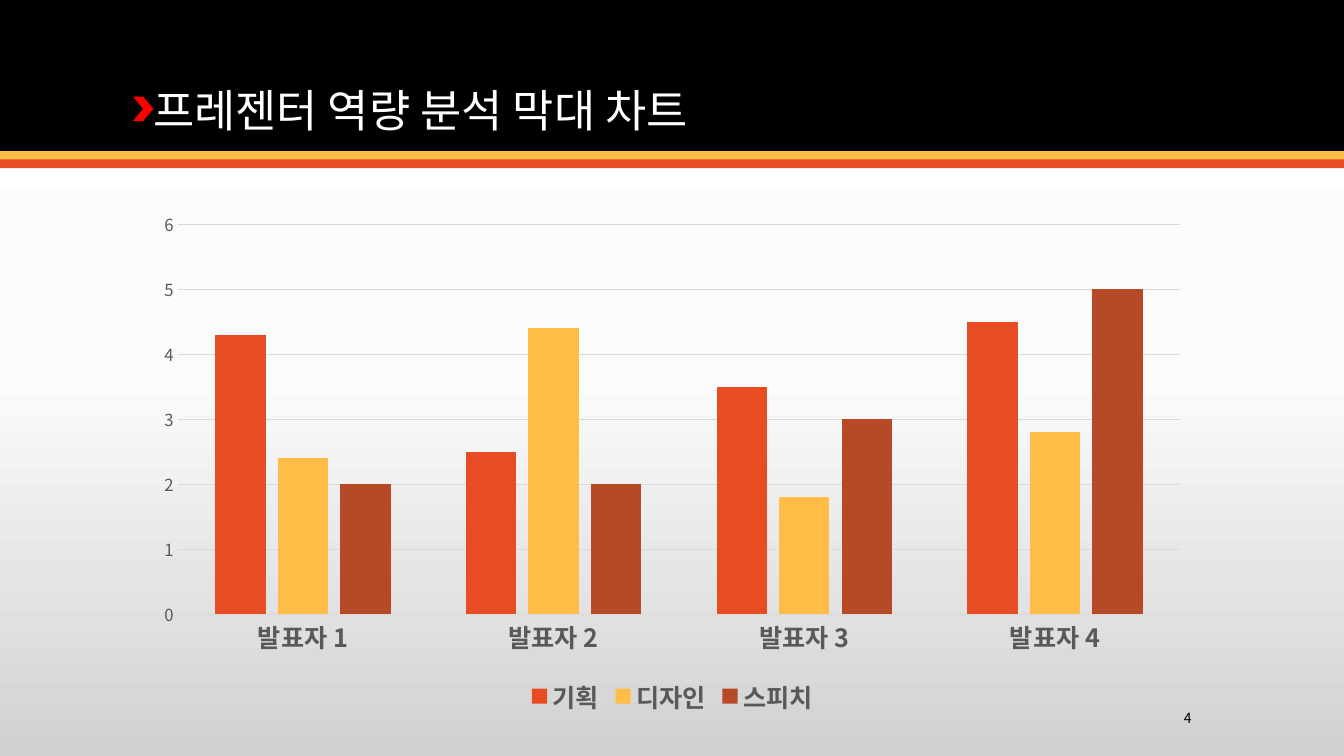
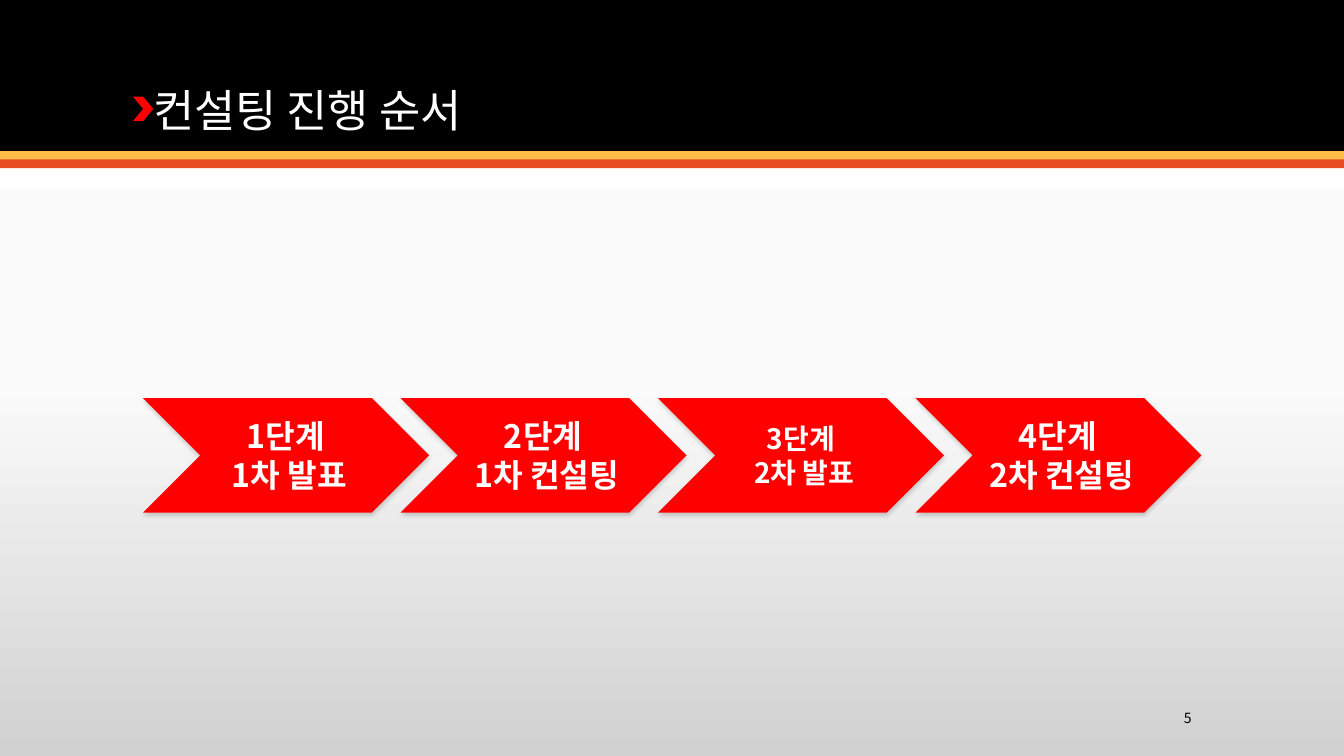
from copy import deepcopy

from lxml import etree
from pptx import Presentation
from pptx.chart.data import CategoryChartData
from pptx.dml.color import RGBColor
from pptx.enum import chart as kinds, shapes, text
from pptx.oxml.ns import qn
from pptx.util import Pt

FONT = "Noto Sans CJK KR"
BLACK, WHITE, RED = "000000", "FFFFFF", "FF0000"
ORANGE, YELLOW, BROWN = "E84C22", "FFBD47", "B64926"
GRAY, RULE = "595959", "D9D9D9"
WIDTH, HEIGHT = 960, 540
LEFT, BODY_WIDTH = 102.24, 756

BACKDROP = [(0, WHITE), (0.5, "FBFBFB"), (1, "D1D1D1")]
BANDS = [(0, 108, BLACK), (108, 6.2, YELLOW), (113.9, 6.2, ORANGE)]

CHART_TITLE = "프레젠터 역량 분석 막대 차트"
PRESENTERS = ["발표자 1", "발표자 2", "발표자 3", "발표자 4"]
SKILLS = [
    ("기획", (4.3, 2.5, 3.5, 4.5), ORANGE),
    ("디자인", (2.4, 4.4, 1.8, 2.8), YELLOW),
    ("스피치", (2, 2, 3, 5), BROWN),
]

STEPS_TITLE = "컨설팅 진행 순서"
STEPS = [
    ("1단계 ", "1차 발표", 23),
    ("2단계 ", "1차 컨설팅", 23),
    ("3단계 ", "2차 발표", 20),
    ("4단계 ", "2차 컨설팅", 23),
]


def rgb(color):
    return RGBColor.from_string(color)


def assign(target, values):
    for name, value in values.items():
        setattr(target, name, value)


def style(font, size, color, bold=False):
    assign(font, {"size": Pt(size), "bold": bold, "name": FONT})
    font.fill.solid()
    font.fill.fore_color.rgb = rgb(color)
    etree.SubElement(font._rPr, qn("a:ea")).set("typeface", FONT)


def write(shape, lines, size, color, bold=False, align=text.PP_ALIGN.LEFT,
          anchor=text.MSO_ANCHOR.MIDDLE, spacing=1.0):
    frame = shape.text_frame
    assign(frame, {"word_wrap": True, "vertical_anchor": anchor})
    frame.text = "\n".join(lines)
    for paragraph in frame.paragraphs:
        assign(paragraph, {"alignment": align, "line_spacing": spacing})
        style(paragraph.runs[0].font, size, color, bold)
    return frame


def add_filled(parent, kind, box, color):
    shape = parent.add_shape(kind, *map(Pt, box))
    shape.shadow.inherit = False
    shape.fill.solid()
    shape.fill.fore_color.rgb = rgb(color)
    shape.line.fill.background()
    return shape


def add_backdrop(slide):
    fill = slide.background.fill
    fill.gradient()
    fill.gradient_angle = 270
    stops = slide._element.find(".//" + qn("a:gsLst"))
    stops.append(deepcopy(stops[0]))
    for stop, (position, color) in zip(fill.gradient_stops, BACKDROP):
        stop.position = position
        stop.color.rgb = rgb(color)


def add_slide(deck, title, number):
    slide = deck.slides.add_slide(deck.slide_layouts[6])
    add_backdrop(slide)
    for top, height, color in BANDS:
        add_filled(slide.shapes, shapes.MSO_SHAPE.RECTANGLE, (0, top, WIDTH, height), color)
    add_filled(slide.shapes, shapes.MSO_SHAPE.CHEVRON, (95, 69, 14.5, 17.5), RED)
    heading = slide.shapes.add_textbox(Pt(LEFT), Pt(20), Pt(BODY_WIDTH), Pt(81.5))
    write(heading, [title], 32, WHITE, anchor=text.MSO_ANCHOR.BOTTOM, spacing=0.9)
    footer = slide.shapes.add_textbox(Pt(LEFT + BODY_WIDTH - 108), Pt(502), Pt(108), Pt(21.6))
    write(footer, [str(number)], 10, BLACK, align=text.PP_ALIGN.RIGHT)
    return slide


def add_skill_chart(slide):
    data = CategoryChartData()
    data.categories = PRESENTERS
    for name, values, _ in SKILLS:
        data.add_series(name, values)
    chart = slide.shapes.add_chart(
        kinds.XL_CHART_TYPE.COLUMN_CLUSTERED,
        Pt(LEFT), Pt(144), Pt(BODY_WIDTH), Pt(370), data).chart
    assign(chart, {"has_title": False, "has_legend": True})
    assign(chart.legend, {"position": kinds.XL_LEGEND_POSITION.BOTTOM,
                          "include_in_layout": False})
    style(chart.legend.font, 18, GRAY, True)

    plot = chart.plots[0]
    assign(plot, {"gap_width": 150, "overlap": -24, "vary_by_categories": False})
    for series, (_, _, color) in zip(plot.series, SKILLS):
        series.format.fill.solid()
        series.format.fill.fore_color.rgb = rgb(color)

    presenters, scores = chart.category_axis, chart.value_axis
    for axis, size, bold in ((presenters, 18, True), (scores, 11.9, False)):
        assign(axis, {"major_tick_mark": kinds.XL_TICK_MARK.NONE,
                      "minor_tick_mark": kinds.XL_TICK_MARK.NONE})
        style(axis.tick_labels.font, size, GRAY, bold)
    assign(scores, {"minimum_scale": 0, "maximum_scale": 6, "major_unit": 1,
                    "has_major_gridlines": True})
    for line in (presenters.format.line, scores.major_gridlines.format.line):
        line.width = Pt(0.75)
        line.color.rgb = rgb(RULE)
    scores.format.line.fill.background()


def add_soft_shadow(shape):
    effects = shape._element.spPr.find(qn("a:effectLst"))
    shadow = etree.SubElement(effects, qn("a:outerShdw"), blurRad=str(Pt(3.1)),
                              dist=str(Pt(2)), dir="5400000", rotWithShape="0")
    tint = etree.SubElement(shadow, qn("a:srgbClr"), val=BLACK)
    etree.SubElement(tint, qn("a:alpha"), val="17000")


def add_steps(slide):
    group = slide.shapes.add_group_shape()
    width = BODY_WIDTH / (1 + 0.9 * (len(STEPS) - 1))
    height = 0.4 * width
    for index, (stage, task, size) in enumerate(STEPS):
        box = (LEFT + index * 0.9 * width, 284.4, width, height)
        step = add_filled(group.shapes, shapes.MSO_SHAPE.CHEVRON, box, RED)
        add_soft_shadow(step)
        frame = write(step, [stage, task], size, WHITE, True, text.PP_ALIGN.CENTER)
        assign(frame, {"margin_left": Pt(7.2), "margin_right": Pt(2.4),
                       "margin_top": Pt(2.4), "margin_bottom": Pt(2.4)})


def main():
    deck = Presentation()
    assign(deck, {"slide_width": Pt(WIDTH), "slide_height": Pt(HEIGHT)})
    add_skill_chart(add_slide(deck, CHART_TITLE, 4))
    add_steps(add_slide(deck, STEPS_TITLE, 5))
    deck.save("out.pptx")


if __name__ == "__main__":
    main()
